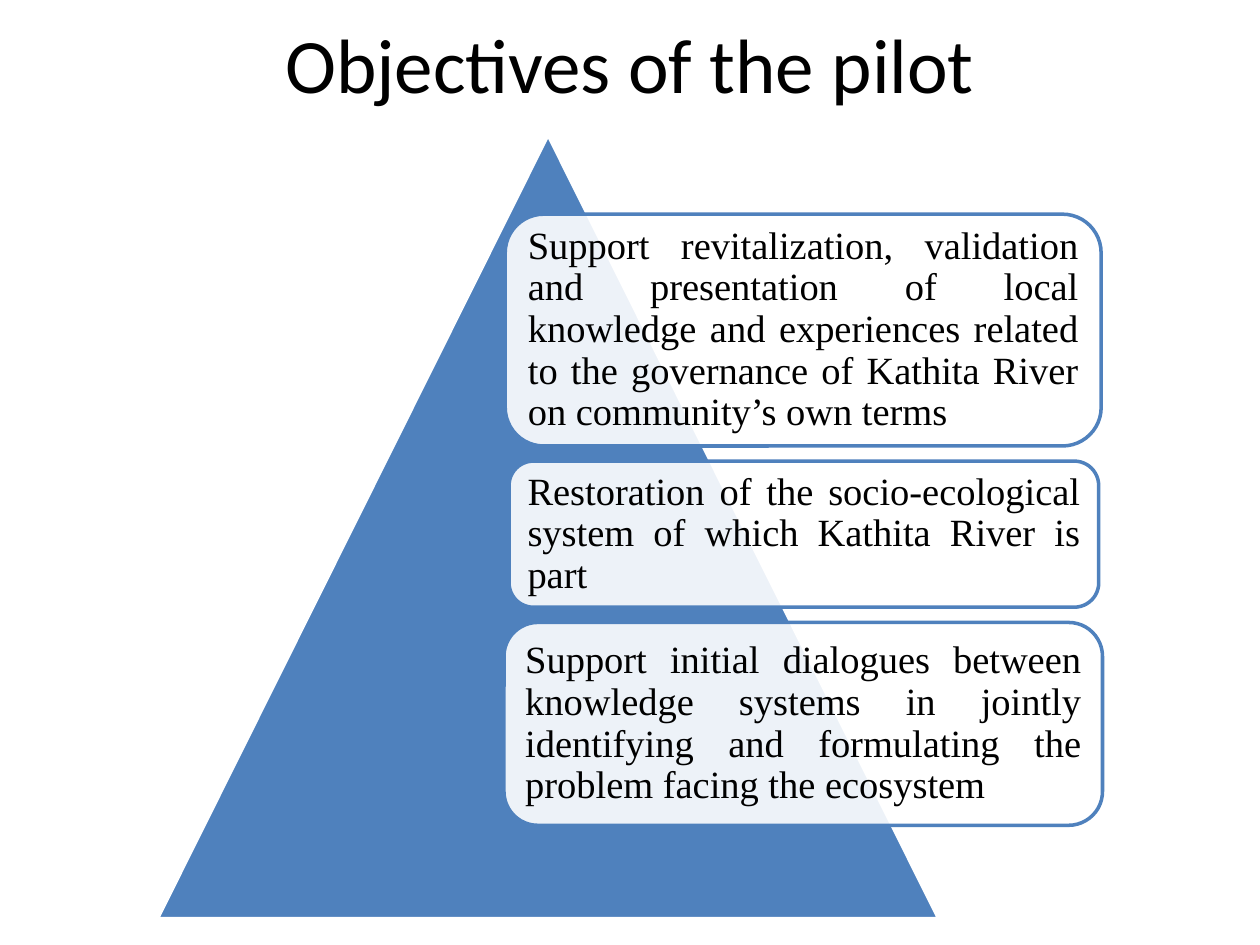
from dataclasses import dataclass

from lxml import etree
from pptx import Presentation
from pptx import util as u
from pptx.dml.color import RGBColor
from pptx.enum import shapes, text
from pptx.oxml import ns

BLUE, WHITE, BLACK = "4F81BD", "FFFFFF", "000000"


@dataclass
class Objective:
    left: float
    top: float
    width: float
    height: float
    wording: str


OBJECTIVES = [
    Objective(4.01, 1.7, 4.73, 1.84,
              "Support revitalization, validation and presentation of local knowledge and "
              "experiences related to the governance of Kathita River on community’s own terms"),
    Objective(4.04, 3.66, 4.68, 1.16,
              "Restoration of the socio-ecological system of which Kathita River is part"),
    Objective(4, 4.94, 4.75, 1.61,
              "Support initial dialogues between knowledge systems in jointly identifying "
              "and formulating the problem facing the ecosystem"),
]


def colour(value: str) -> RGBColor:
    return RGBColor.from_string(value)


def add_filled(page, kind, place: tuple, fill: str, line: str):
    shape = page.shapes.add_shape(kind, *map(u.Inches, place))
    shape.shadow.inherit = False
    shape.fill.solid()
    shape.fill.fore_color.rgb = colour(fill)
    shape.line.color.rgb = colour(line)
    shape.line.width = u.Pt(2)
    return shape


def set_opacity(shape, percent: int) -> None:
    fill = shape._element.spPr.find(ns.qn("a:solidFill"))
    etree.SubElement(fill[0], ns.qn("a:alpha"), val=str(percent * 1000))


def write(box, wording: str, font: str, size: float, align):
    """Fill the box with one vertically centred paragraph and return it."""
    frame = box.text_frame
    frame.word_wrap = True
    frame.vertical_anchor = text.MSO_ANCHOR.MIDDLE
    para = frame.paragraphs[0]
    para.text = wording
    para.alignment = align
    para.font.name = font
    para.font.size = u.Pt(size)
    para.font.color.rgb = colour(BLACK)
    return para


def add_objective(page, item: Objective) -> None:
    place = (item.left, item.top, item.width, item.height)
    box = add_filled(page, shapes.MSO_SHAPE.ROUNDED_RECTANGLE, place, WHITE, BLUE)
    set_opacity(box, 90)
    para = write(box, item.wording, "Times New Roman", 22, text.PP_ALIGN.JUSTIFY)
    para.line_spacing = 0.9
    frame = box.text_frame
    frame.margin_left = frame.margin_right = u.Inches(0.09)
    frame.margin_top = frame.margin_bottom = u.Inches(0.09)


def main() -> None:
    deck = Presentation()
    deck.slide_width, deck.slide_height = u.Inches(10), u.Inches(7.5)
    page = deck.slides.add_slide(deck.slide_layouts[6])
    title = page.shapes.add_textbox(0, 0, deck.slide_width, u.Inches(0.99))
    write(title, "Objectives of the pilot", "Calibri", 44, text.PP_ALIGN.CENTER)
    add_filled(page, shapes.MSO_SHAPE.ISOSCELES_TRIANGLE, (1.25, 1.07, 6.2, 6.22), BLUE, WHITE)
    for item in OBJECTIVES:
        add_objective(page, item)
    deck.save("out.pptx")


if __name__ == "__main__":
    main()
